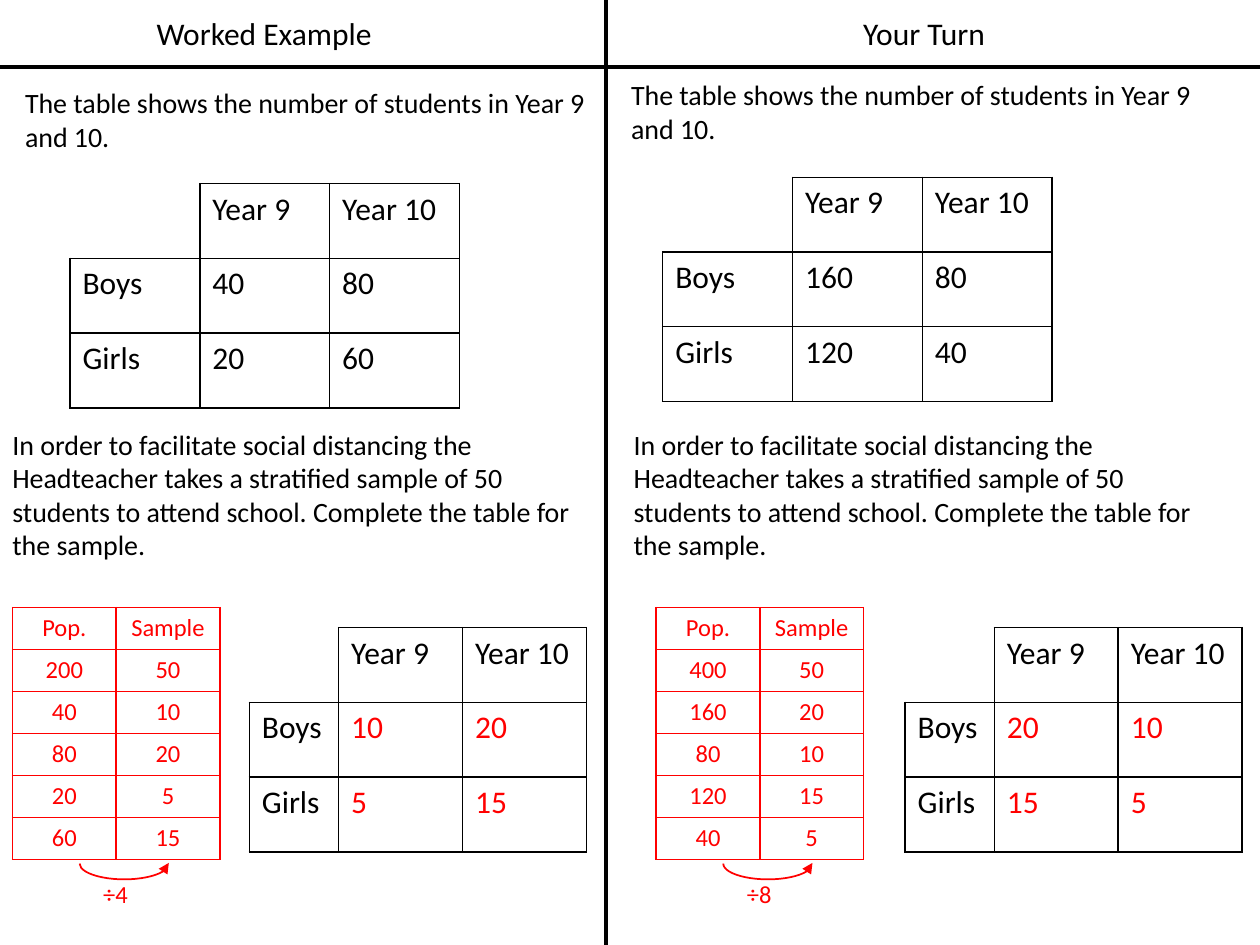
from lxml.etree import SubElement as Sub
from pptx import Presentation
from pptx.dml.color import RGBColor
from pptx.enum.shapes import MSO_CONNECTOR as Link, MSO_SHAPE as Kind
from pptx.enum.text import MSO_ANCHOR as Anchor, PP_ALIGN as Align
from pptx.oxml.ns import qn
from pptx.util import Pt

BLACK = RGBColor(0, 0, 0)
RED = RGBColor(255, 0, 0)
FONT = "Calibri"
YEARS = ["Year 9", "Year 10"]
INTRO = "The table shows the number of students in Year 9 and 10."
TASK = ("In order to facilitate social distancing the Headteacher takes a "
        "stratified sample of 50 students to attend school. "
        "Complete the table for the sample.")


def put(frame, text, size=18, color=BLACK, align=Align.LEFT):
    """Write formatted text into a text frame."""
    para = frame.paragraphs[0]
    para.alignment = align
    run = para.add_run()
    run.text = text
    run.font.name = FONT
    run.font.size = Pt(size)
    run.font.color.rgb = color


def box(slide, left, top, width, height, text, **style):
    area = slide.shapes.add_textbox(Pt(left), Pt(top), Pt(width), Pt(height))
    area.text_frame.word_wrap = True
    put(area.text_frame, text, **style)


def rule(slide, x1, y1, x2, y2):
    line = slide.shapes.add_connector(Link.STRAIGHT, Pt(x1), Pt(y1), Pt(x2), Pt(y2))
    line.line.color.rgb = BLACK
    line.line.width = Pt(2.5)
    Sub(line._element.spPr, qn("a:effectLst"))


def edge(cell, color, hidden=""):
    """Draw the cell borders, except the hidden sides."""
    props = cell._tc.get_or_add_tcPr()
    for i, side in enumerate("LRTB"):
        line = Sub(props, qn("a:ln" + side), w=str(Pt(1)))
        if side in hidden:
            Sub(line, qn("a:noFill"))
        else:
            fill = Sub(line, qn("a:solidFill"))
            Sub(fill, qn("a:srgbClr"), val=str(color))
        props.insert(i, line)


def grid(slide, left, top, cols, high, rows):
    """Add a plain table and return it with its cells unformatted."""
    table = slide.shapes.add_table(len(rows), len(cols), Pt(left), Pt(top),
                                   Pt(sum(cols)), Pt(high * len(rows))).table
    table.first_row = table.horz_banding = False
    for col, width in zip(table.columns, cols):
        col.width = Pt(width)
    for row in table.rows:
        row.height = Pt(high)
    for cell in table.iter_cells():
        cell.fill.background()
    return table


def count(slide, left, top, cols, boys, girls, color=BLACK):
    """Table of boys and girls by year, with an open corner."""
    rows = [[""] + YEARS, ["Boys"] + boys, ["Girls"] + girls]
    table = grid(slide, left, top, cols, 42.7, rows)
    for r, row in enumerate(rows):
        for c, text in enumerate(row):
            cell = table.cell(r, c)
            edge(cell, BLACK, hidden="" if r or c else "LT")
            if text:
                put(cell.text_frame, text, color=color if r and c else BLACK)


def scale(slide, left, pairs, factor):
    """Red working table with the arrow and divisor below it."""
    rows = [("Pop.", "Sample")] + pairs
    table = grid(slide, left, 347.2, [59.2] * 2, 24, rows)
    for r, row in enumerate(rows):
        for c, text in enumerate(row):
            cell = table.cell(r, c)
            cell.margin_left = cell.margin_right = Pt(0)
            cell.margin_top = cell.margin_bottom = Pt(0)
            cell.vertical_anchor = Anchor.MIDDLE
            edge(cell, RED)
            put(cell.text_frame, text, size=14, color=RED, align=Align.CENTER)

    arc = slide.shapes.add_shape(Kind.ARC, Pt(left + 38.3), Pt(484.5), Pt(51), Pt(18))
    arc.adjustments[0] = 215.46
    arc.adjustments[1] = 108
    arc.shadow.inherit = False
    arc.fill.background()
    arc.line.color.rgb = RED
    arc.line.width = Pt(1)
    Sub(arc.line._get_or_add_ln(), qn("a:headEnd"), type="triangle")
    box(slide, left + 44.7, 499, 34, 24.5, factor, size=14, color=RED)


def main():
    deck = Presentation()
    deck.slide_width, deck.slide_height = Pt(720), Pt(540)
    slide = deck.slides.add_slide(deck.slide_layouts[6])

    # Headings and dividing lines
    for left, title in ((81.4, "Worked Example"), (458.6, "Your Turn")):
        box(slide, left, 4.3, 139, 29, title, align=Align.CENTER)
    rule(slide, 346.3, 0, 346.3, 540)
    rule(slide, 0, 38.2, 720, 38.2)

    # Question text
    for left, top, text, high in ((7.2, 45.4, INTRO, 67.7), (353.5, 41, INTRO, 67.7),
                                  (0, 240.5, TASK, 106.6), (355, 240.5, TASK, 106.6)):
        box(slide, left, top, 346.3, high, text, size=16)

    # Population tables
    wide = [74.2] * 3
    count(slide, 40, 105, wide, ["40", "80"], ["20", "60"])
    count(slide, 378.7, 101.3, wide, ["160", "80"], ["120", "40"])

    # Sample tables
    slim = [51, 70.8, 70.8]
    count(slide, 142.5, 358.7, slim, ["10", "20"], ["5", "15"], color=RED)
    count(slide, 517.2, 358.7, slim, ["20", "10"], ["15", "5"], color=RED)

    # Working from population to sample
    scale(slide, 7.2, [("200", "50"), ("40", "10"), ("80", "20"),
                       ("20", "5"), ("60", "15")], "÷4")
    scale(slide, 375, [("400", "50"), ("160", "20"), ("80", "10"),
                       ("120", "15"), ("40", "5")], "÷8")

    deck.save("out.pptx")


if __name__ == "__main__":
    main()
